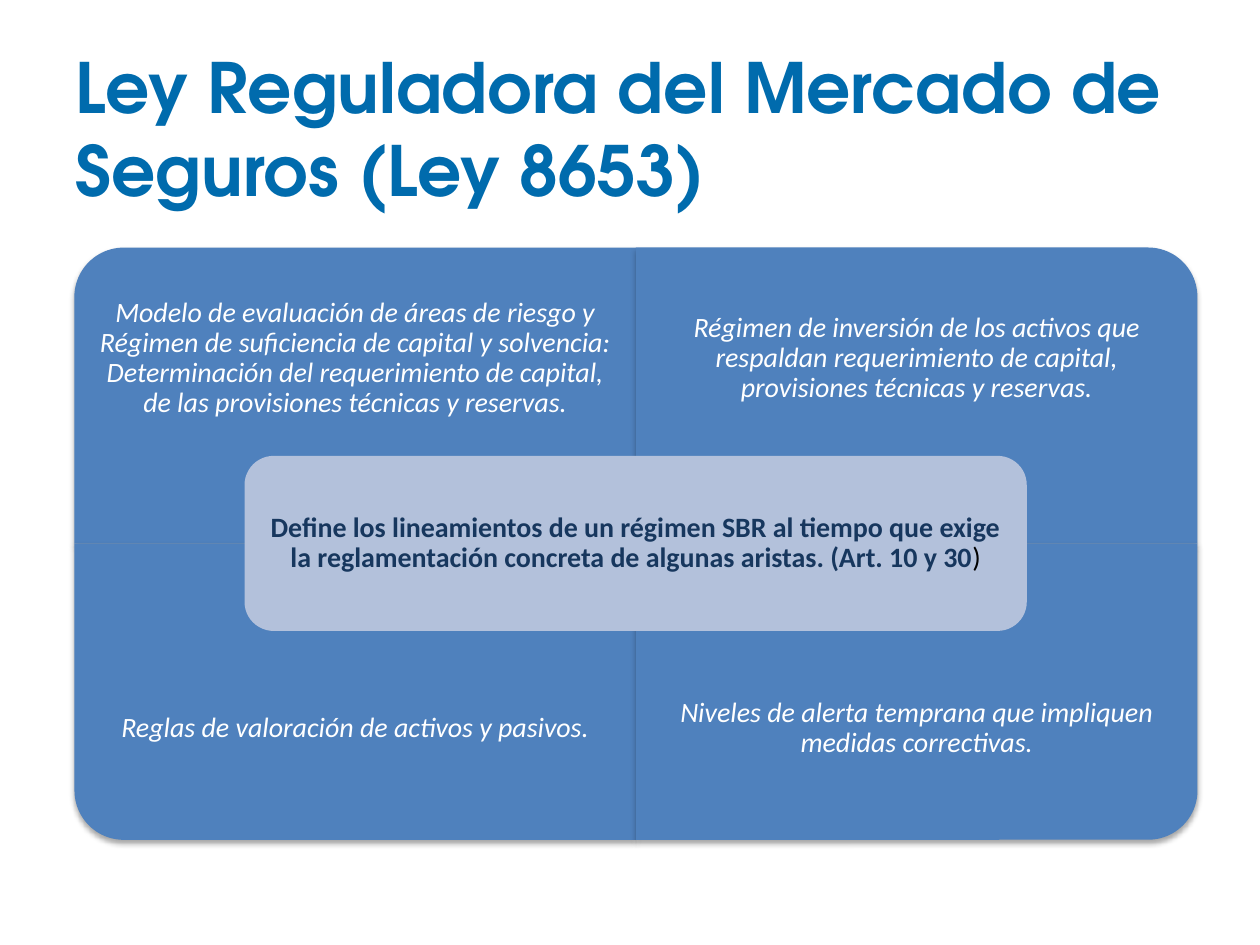
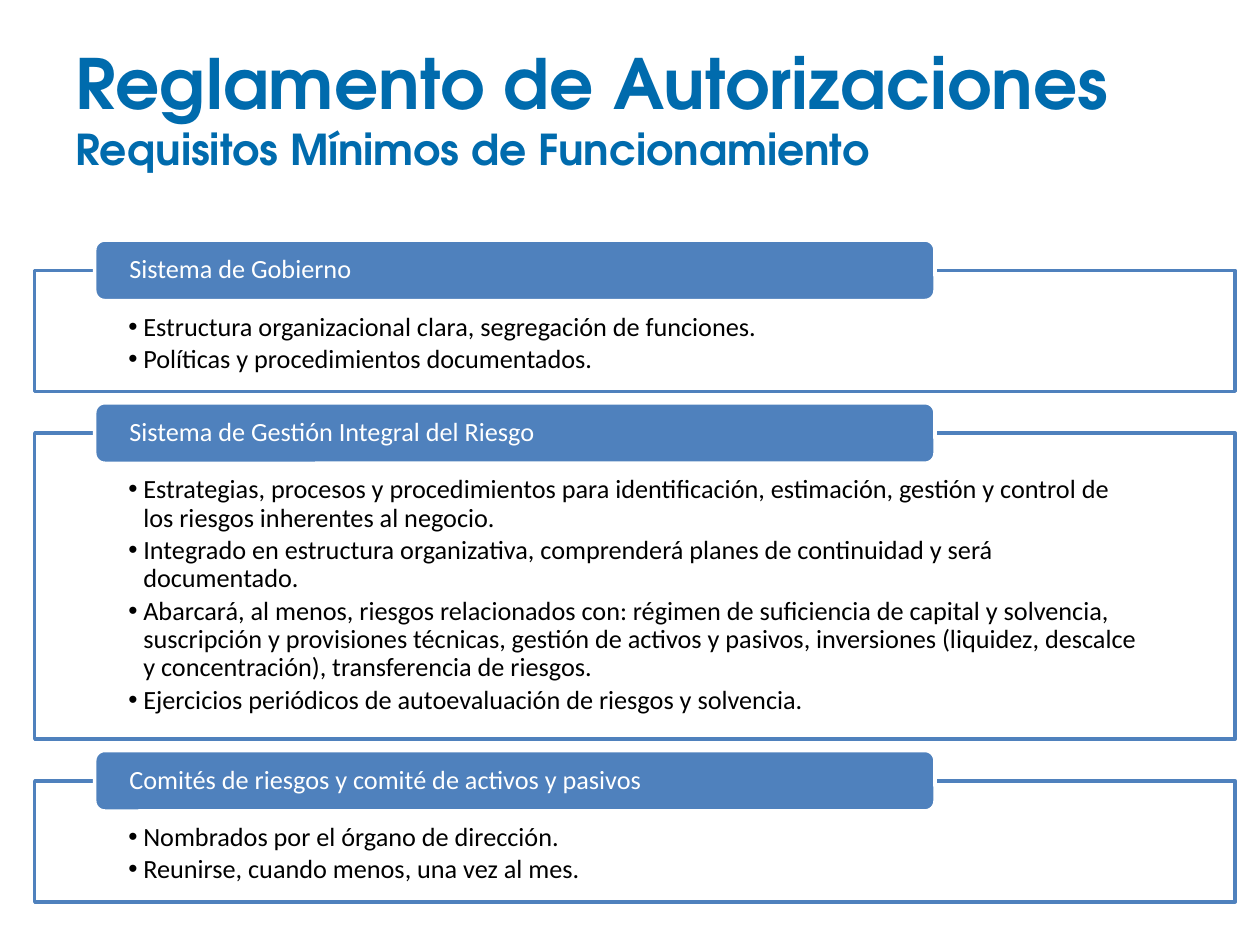
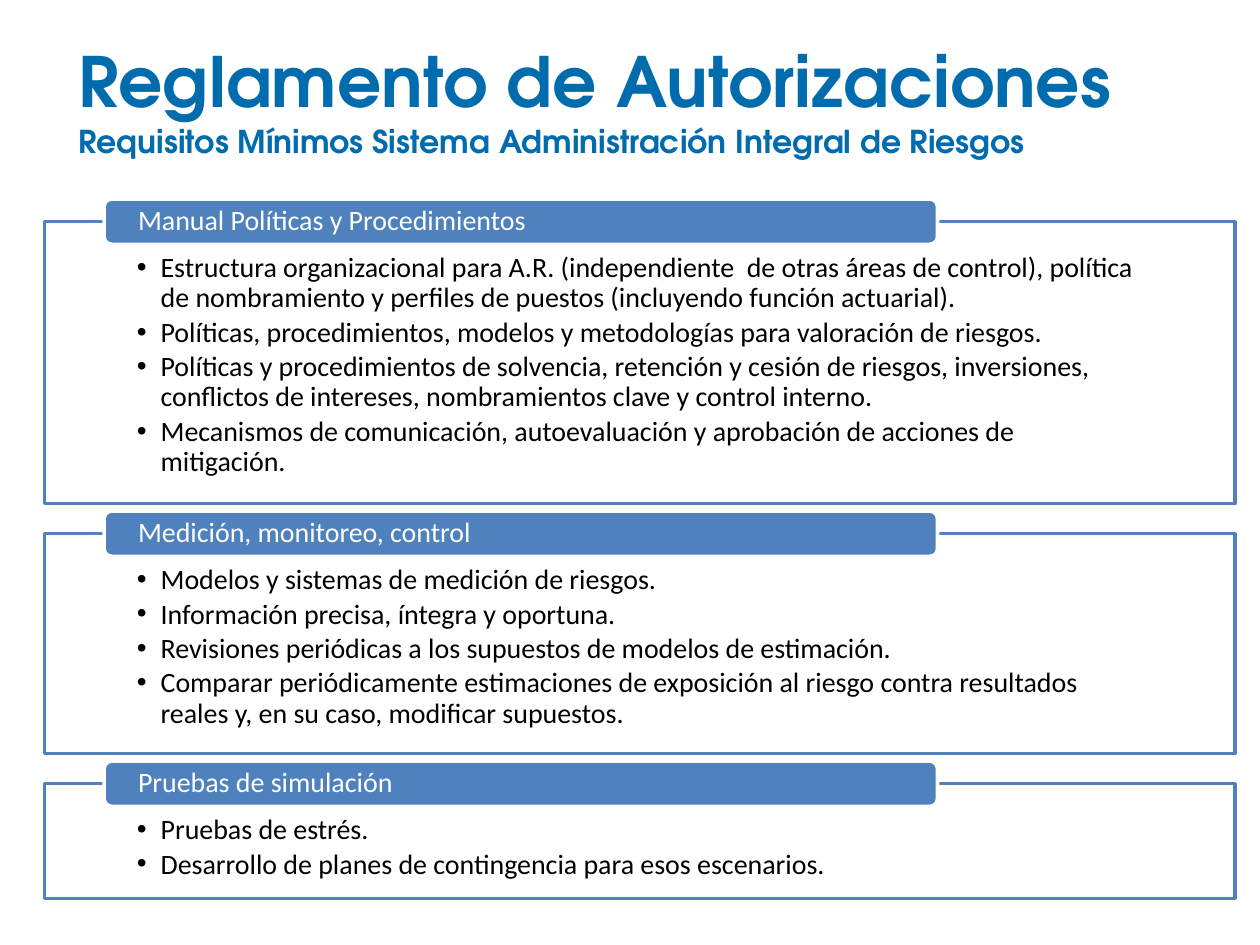
from dataclasses import dataclass

from lxml import etree
from pptx import Presentation
from pptx.dml.color import RGBColor
from pptx.enum.shapes import MSO_SHAPE
from pptx.enum.text import MSO_ANCHOR, PP_ALIGN
from pptx.oxml.ns import qn
from pptx.util import Cm, Pt

ROUND_RECTANGLE = MSO_SHAPE.ROUNDED_RECTANGLE
ROUND_CORNER = MSO_SHAPE.ROUND_1_RECTANGLE
RECTANGLE = MSO_SHAPE.RECTANGLE
TOP, MIDDLE = MSO_ANCHOR.TOP, MSO_ANCHOR.MIDDLE
LEFT, CENTER = PP_ALIGN.LEFT, PP_ALIGN.CENTER

TITLE_BLUE = RGBColor(0x00, 0x6B, 0xAD)
BLUE = RGBColor(0x4F, 0x81, 0xBD)
PALE_BLUE = RGBColor(0xB3, 0xC1, 0xDB)
NAVY = RGBColor(0x17, 0x37, 0x5E)
WHITE = RGBColor(0xFF, 0xFF, 0xFF)
BLACK = RGBColor(0x00, 0x00, 0x00)
TITLE_FONT, BODY_FONT = "TeX Gyre Adventor", "Calibri"
TITLE_SIZE = 39.6


@dataclass
class PanelStyle:
    """Measures in centimetres and text size in points of a stack of panels."""
    left: float
    top: float
    width: float
    gap: float
    tab_height: float
    side_inset: float
    top_inset: float
    hanging: float
    size: int


WIDE_TABS = PanelStyle(0.7, 5.45, 24.2, 0.84, 1.22, 1.89, 0.87, 0.3, 15)
NARROW_TABS = PanelStyle(0.9, 4.47, 24, 0.61, 0.91, 1.86, 0.64, 0.48, 16)

QUADRANTS = [
    ("Modelo de evaluación de áreas de riesgo y Régimen de suficiencia de capital y solvencia: "
     "Determinación del requerimiento de capital, de las provisiones técnicas y reservas.", 270),
    ("Régimen de inversión de los activos que respaldan requerimiento de capital, "
     "provisiones técnicas y reservas.", 0),
    ("Reglas de valoración de activos y pasivos.", 180),
    ("Niveles de alerta temprana que impliquen medidas correctivas.", 90),
]
CENTRAL_IDEA = ("Define los lineamientos de un régimen SBR al tiempo que exige la reglamentación "
                "concreta de algunas aristas. (Art. 10 y 30")

MINIMUM_REQUIREMENTS = [
    ("Sistema de Gobierno", 2.44, [
        "Estructura organizacional clara, segregación de funciones.",
        "Políticas y procedimientos documentados."]),
    ("Sistema de Gestión Integral del Riesgo", 6.17, [
        "Estrategias, procesos y procedimientos para identificación, estimación, gestión y "
        "control de los riesgos inherentes al negocio.",
        "Integrado en estructura organizativa, comprenderá planes de continuidad y será "
        "documentado.",
        "Abarcará, al menos, riesgos relacionados con: régimen de suficiencia de capital y "
        "solvencia, suscripción y provisiones técnicas, gestión de activos y pasivos, "
        "inversiones (liquidez, descalce y concentración), transferencia de riesgos.",
        "Ejercicios periódicos de autoevaluación de riesgos y solvencia."]),
    ("Comités de riesgos y comité de activos y pasivos", 2.44, [
        "Nombrados por el órgano de dirección.",
        "Reunirse, cuando menos, una vez al mes."]),
]

RISK_MANAGEMENT = [
    ("Manual Políticas y Procedimientos", 5.68, [
        "Estructura organizacional para A.R. (independiente  de otras áreas de control), "
        "política de nombramiento y perfiles de puestos (incluyendo función actuarial).",
        "Políticas, procedimientos, modelos y metodologías para valoración de riesgos.",
        "Políticas y procedimientos de solvencia, retención y cesión de riesgos, inversiones, "
        "conflictos de intereses, nombramientos clave y control interno.",
        "Mecanismos de comunicación, autoevaluación y aprobación de acciones de mitigación."]),
    ("Medición, monitoreo, control", 4.43, [
        "Modelos y sistemas de medición de riesgos.",
        "Información precisa, íntegra y oportuna.",
        "Revisiones periódicas a los supuestos de modelos de estimación.",
        "Comparar periódicamente estimaciones de exposición al riesgo contra resultados "
        "reales y, en su caso, modificar supuestos."]),
    ("Pruebas de simulación", 2.31, [
        "Pruebas de estrés.",
        "Desarrollo de planes de contingencia para esos escenarios."]),
]


def format_run(run, size, color, name=BODY_FONT, bold=False, italic=False):
    """Give a run its font."""
    font = run.font
    font.name, font.size, font.bold, font.italic = name, Pt(size), bold, italic
    font.color.rgb = color


def set_frame(text_frame, anchor, left, top, right, bottom):
    """Wrap the text and set its anchor and insets in centimetres."""
    text_frame.word_wrap = True
    text_frame.vertical_anchor = anchor
    text_frame.margin_left, text_frame.margin_top = Cm(left), Cm(top)
    text_frame.margin_right, text_frame.margin_bottom = Cm(right), Cm(bottom)


def write_line(text_frame, text, size, color, align, **style):
    """Write one tightly spaced paragraph and return it."""
    text_frame.text = text
    paragraph = text_frame.paragraphs[0]
    paragraph.alignment = align
    paragraph.line_spacing = 0.9
    format_run(paragraph.runs[0], size, color, **style)
    return paragraph


def add_box(slide, kind, left, top, width, height, fill, line=None):
    """Add a filled preset shape without a shadow, placed in centimetres."""
    shape = slide.shapes.add_shape(kind, Cm(left), Cm(top), Cm(width), Cm(height))
    shape.shadow.inherit = False
    shape.fill.solid()
    shape.fill.fore_color.rgb = fill
    if line is None:
        shape.line.fill.background()
    else:
        shape.line.color.rgb = line
        shape.line.width = Pt(2)
    return shape


def add_soft_shadow(shape):
    """Give a shape a soft shadow below it."""
    effects = shape._element.spPr.find(qn("a:effectLst"))
    shadow = etree.SubElement(effects, qn("a:outerShdw"), blurRad="40000", dist="23000",
                              dir="5400000", rotWithShape="0")
    color = etree.SubElement(shadow, qn("a:srgbClr"), val=str(BLACK))
    etree.SubElement(color, qn("a:alpha"), val="35000")


def add_title(slide, left, top, title, subtitle=None, subtitle_size=None):
    """Add the slide title with an optional smaller second line."""
    box = slide.shapes.add_textbox(Cm(left), Cm(top), Cm(22.86), Cm(3.68))
    set_frame(box.text_frame, MIDDLE, 0.25, 0.13, 0.25, 0.13)
    paragraph = box.text_frame.paragraphs[0]
    paragraph.text = f"{title}\v{subtitle}" if subtitle else title
    for run, size in zip(paragraph.runs, (TITLE_SIZE, subtitle_size)):
        format_run(run, size, TITLE_BLUE, TITLE_FONT, bold=True)


def add_quadrants(slide, left, top, width, height):
    """Add four quadrants whose rounded corners face outwards."""
    text_height = height * 0.75
    for index, (text, rotation) in enumerate(QUADRANTS):
        row, column = divmod(index, 2)
        x, y = left + column * width, top + row * height
        across, down = (height, width) if rotation % 180 else (width, height)
        quadrant = add_box(slide, ROUND_CORNER, x + (width - across) / 2,
                           y + (height - down) / 2, across, down, BLUE)
        quadrant.rotation = rotation
        add_soft_shadow(quadrant)
        text_top = y + row * (height - text_height)
        box = slide.shapes.add_textbox(Cm(x), Cm(text_top), Cm(width), Cm(text_height))
        set_frame(box.text_frame, MIDDLE, 0.35, 0.3, 0.35, 0.3)
        write_line(box.text_frame, text, 16, WHITE, CENTER, italic=True)


def add_central_idea(slide):
    """Add the pale box that lies over the quadrants."""
    box = add_box(slide, ROUND_RECTANGLE, 4.93, 9.19, 15.77, 3.53, PALE_BLUE)
    set_frame(box.text_frame, MIDDLE, 0.18, 0.18, 0.18, 0.18)
    paragraph = write_line(box.text_frame, CENTRAL_IDEA, 16, NAVY, CENTER, bold=True)
    closing = paragraph.add_run()
    closing.text = ")"
    format_run(closing, 16, BLACK)


def write_bullets(text_frame, bullets, size, hanging):
    """Write a bulleted list with a hanging indent in centimetres."""
    text_frame.text = "\n".join(bullets)
    for paragraph in text_frame.paragraphs:
        paragraph.alignment = LEFT
        paragraph.line_spacing = 0.9
        paragraph.space_after = Pt(size * 0.15)
        properties = paragraph._p.get_or_add_pPr()
        properties.set("marL", str(Cm(hanging)))
        properties.set("indent", str(-Cm(hanging)))
        etree.SubElement(properties, qn("a:buFont"), typeface="Arial")
        etree.SubElement(properties, qn("a:buChar"), char="•")
        format_run(paragraph.runs[0], size, BLACK)


def add_panel(slide, style, top, height, heading, bullets):
    """Add an outlined list with a heading tab centred on its top edge."""
    panel = add_box(slide, RECTANGLE, style.left, top, style.width, height, WHITE, BLUE)
    color = panel._element.spPr.find(qn("a:solidFill"))[0]
    etree.SubElement(color, qn("a:alpha"), val="90000")
    set_frame(panel.text_frame, TOP, style.side_inset, style.top_inset, style.side_inset, 0.3)
    write_bullets(panel.text_frame, bullets, style.size, style.hanging)
    tab = add_box(slide, ROUND_RECTANGLE, style.left + style.width * 0.05,
                  top - style.tab_height / 2, style.width * 0.7, style.tab_height, BLUE, WHITE)
    set_frame(tab.text_frame, MIDDLE, 0.64, 0, 0.64, 0)
    write_line(tab.text_frame, heading, style.size, WHITE, LEFT)


def add_panels(slide, style, panels):
    """Stack panels with equal gaps."""
    top = style.top
    for heading, height, bullets in panels:
        add_panel(slide, style, top, height, heading, bullets)
        top += height + style.gap


def main():
    """Build the three slides."""
    presentation = Presentation()
    presentation.slide_width, presentation.slide_height = Cm(25.4), Cm(19.05)
    blank = presentation.slide_layouts[6]

    slide = presentation.slides.add_slide(blank)
    add_title(slide, 1.27, 0.72, "Ley Reguladora del Mercado de Seguros (Ley 8653)")
    add_quadrants(slide, 1.5, 4.99, 11.32, 5.97)
    add_central_idea(slide)

    slide = presentation.slides.add_slide(blank)
    add_title(slide, 1.27, 0.32, "Reglamento de Autorizaciones",
              "Requisitos Mínimos de Funcionamiento", 24.3)
    add_panels(slide, WIDE_TABS, MINIMUM_REQUIREMENTS)

    slide = presentation.slides.add_slide(blank)
    add_title(slide, 1.33, 0.16, "Reglamento de Autorizaciones",
              "Requisitos Mínimos Sistema Administración Integral de Riesgos", 18)
    add_panels(slide, NARROW_TABS, RISK_MANAGEMENT)

    presentation.save("out.pptx")


if __name__ == "__main__":
    main()
